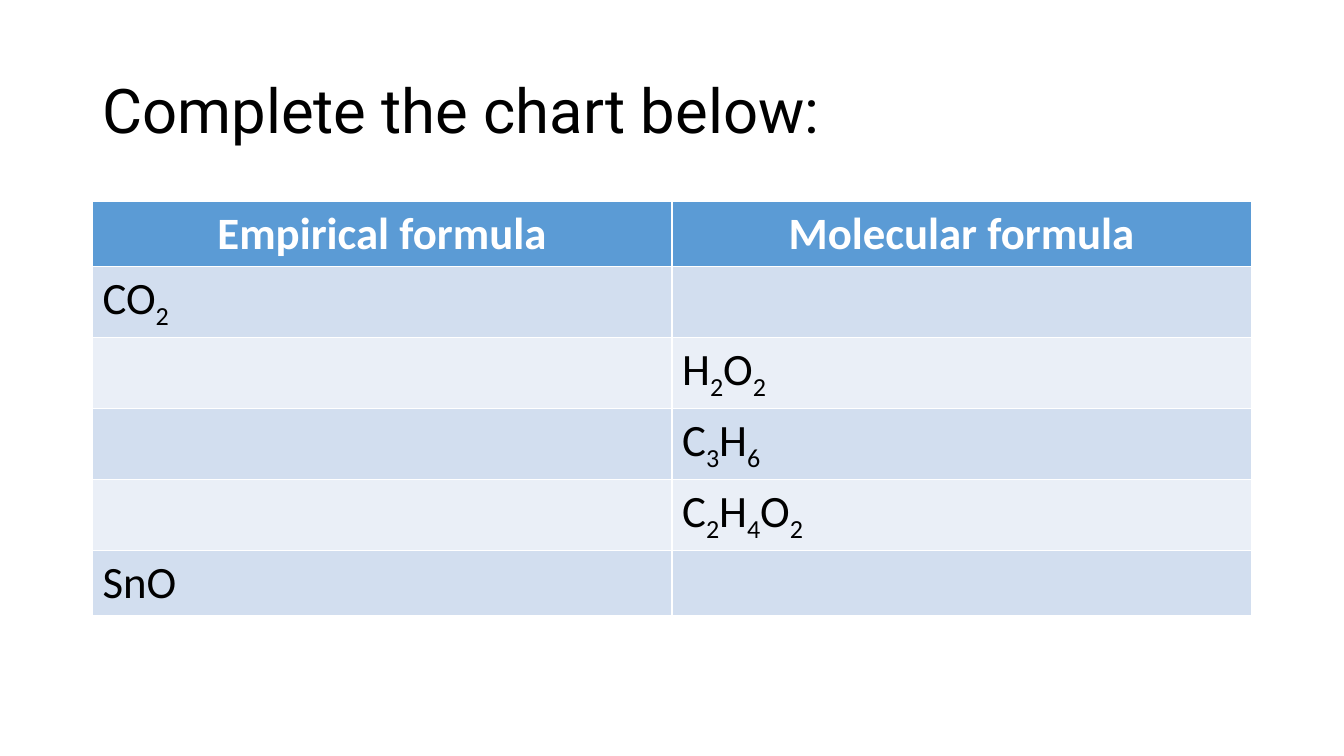
from dataclasses import dataclass

from pptx import Presentation
from pptx.dml.color import RGBColor
from pptx.enum import text as tx
from pptx.util import Cm, Pt


@dataclass
class Row:
    left: str
    right: str
    height: float  # cm


HEAD = Row("Empirical formula", "Molecular formula", 1.61)
ROWS = [
    Row("CO2", "", 1.79),
    Row("", "H2O2", 1.79),
    Row("", "C3H6", 1.79),
    Row("", "C2H4O2", 1.79),
    Row("SnO", "", 1.61),
]
BANDS = ["D2DEEF", "EAEFF7"]
LEFT, WIDTH = 2.33, 29.21


def color(code: str) -> RGBColor:
    return RGBColor.from_string(code)


def style(para, font: str, size: int, code: str, bold: bool = False) -> None:
    para.font.name = font
    para.font.size = Pt(size)
    para.font.bold = bold
    para.font.color.rgb = color(code)


def write(para, formula: str) -> None:
    """Add a formula, with its digits as subscripts."""
    part = ""
    for sign in formula:
        if part and sign.isdigit() != part.isdigit():
            add_run(para, part)
            part = ""
        part += sign
    if part:
        add_run(para, part)


def add_run(para, part: str) -> None:
    run = para.add_run()
    run.text = part
    if part.isdigit():
        run._r.get_or_add_rPr().set("baseline", "-25000")


def add_title(slide) -> None:
    title = slide.shapes.title
    title.left, title.top = Cm(LEFT), Cm(1.01)
    title.width, title.height = Cm(WIDTH), Cm(3.68)
    frame = title.text_frame
    frame.text = "Complete the chart below:"
    frame.vertical_anchor = tx.MSO_ANCHOR.MIDDLE
    para = frame.paragraphs[0]
    para.alignment = tx.PP_ALIGN.LEFT
    para.line_spacing = 0.9
    style(para, "Roboto", 44, "000000")


def add_chart(slide) -> None:
    rows = [HEAD, *ROWS]
    total = sum(row.height for row in rows)
    table = slide.shapes.add_table(
        len(rows), 2, Cm(LEFT), Cm(5.08), Cm(WIDTH), Cm(total)
    ).table
    for i, row in enumerate(rows):
        table.rows[i].height = Cm(row.height)
        head = row is HEAD
        for j, words in enumerate((row.left, row.right)):
            cell = table.cell(i, j)
            cell.fill.solid()
            cell.fill.fore_color.rgb = color("5B9BD5" if head else BANDS[(i - 1) % 2])
            para = cell.text_frame.paragraphs[0]
            para.alignment = tx.PP_ALIGN.CENTER if head else tx.PP_ALIGN.LEFT
            style(para, "Calibri", 32, "FFFFFF" if head else "000000", head)
            write(para, words)


def main() -> None:
    deck = Presentation()
    deck.slide_width, deck.slide_height = Cm(33.87), Cm(19.05)
    # Title Only layout
    slide = deck.slides.add_slide(deck.slide_layouts[5])
    add_title(slide)
    add_chart(slide)
    deck.save("out.pptx")


if __name__ == "__main__":
    main()
